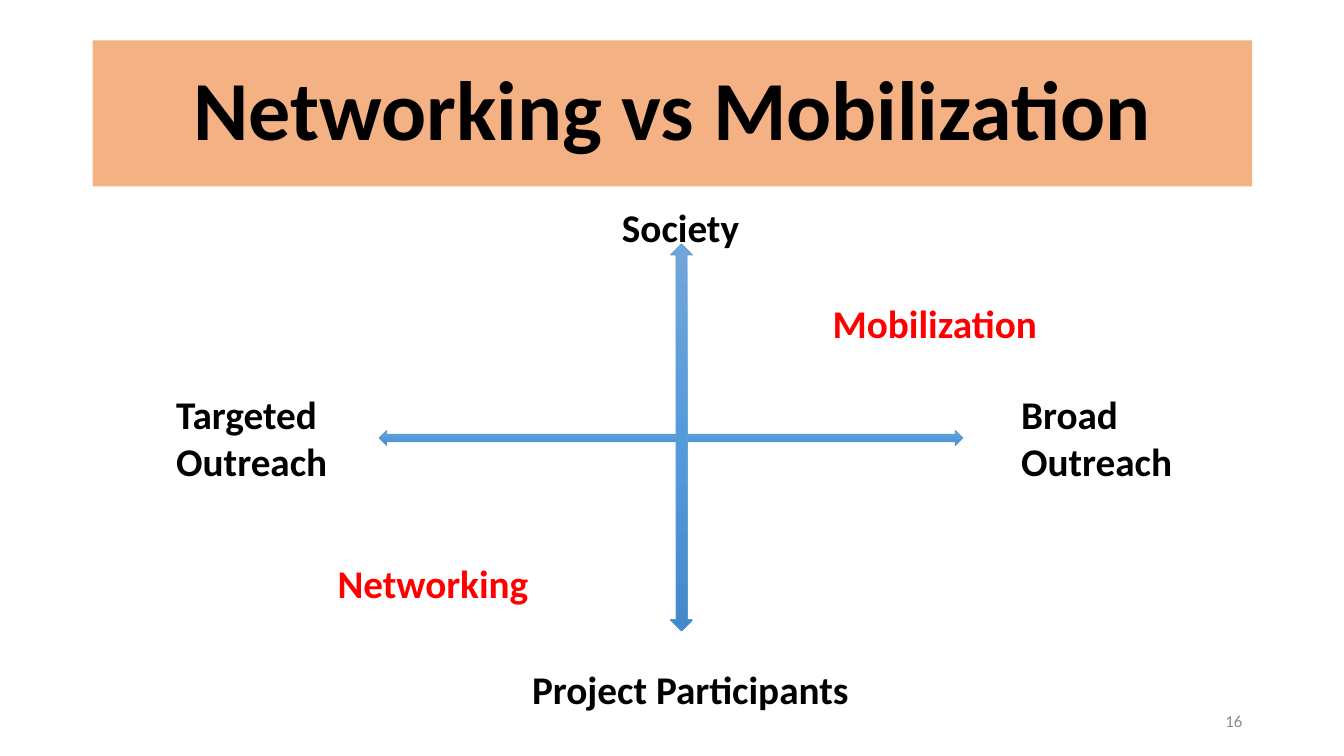
from copy import deepcopy

from pptx import Presentation
from pptx.dml.color import RGBColor
from pptx.enum.shapes import MSO_SHAPE as Shape
from pptx.enum.text import MSO_ANCHOR as Anchor, PP_ALIGN as Align
from pptx.oxml.ns import qn
from pptx.util import Emu, Pt

PX = 9144
COLORS = {
    "banner": "F4B183",
    "ink": "000000",
    "accent": "FF0000",
    "number": "8C8C8C",
    "outline": "5B9BD5",
}
AXIS_GRADIENT = ["71A6DB", "559BDB", "448ACA"]


class SlideBuilder:
    font_name = "Calibri"

    def __init__(self, presentation):
        self.slide = presentation.slides.add_slide(presentation.slide_layouts[6])

    def box(self, bounds):
        return [Emu(length * PX) for length in bounds]

    def color(self, name):
        return RGBColor.from_string(COLORS[name])

    def set_text(self, shape, text, size, color="ink", bold=True,
                 align=Align.LEFT, anchor=Anchor.TOP, wrap=True):
        frame = shape.text_frame
        frame.word_wrap = wrap
        frame.vertical_anchor = anchor
        paragraph = frame.paragraphs[0]
        paragraph.text = text
        paragraph.alignment = align
        font = paragraph.font
        font.name, font.size, font.bold = self.font_name, Pt(size), bold
        font.color.rgb = self.color(color)
        return paragraph

    def shape(self, kind, bounds):
        shape = self.slide.shapes.add_shape(kind, *self.box(bounds))
        shape.shadow.inherit = False
        return shape

    def banner(self, text, bounds):
        banner = self.shape(Shape.RECTANGLE, bounds)
        banner.fill.solid()
        banner.fill.fore_color.rgb = self.color("banner")
        banner.line.fill.background()
        title = self.set_text(banner, text, 60, align=Align.CENTER, anchor=Anchor.MIDDLE)
        title.line_spacing = 0.9

    def axis(self, kind, bounds):
        axis = self.shape(kind, bounds)
        axis.line.color.rgb = self.color("outline")
        axis.line.width = Pt(0.5)
        axis.fill.gradient()
        axis.fill.gradient_angle = 270
        first_stop = axis.element.spPr.find(".//" + qn("a:gs"))
        first_stop.addnext(deepcopy(first_stop))
        for index, stop in enumerate(axis.fill.gradient_stops):
            stop.position = index / 2
            stop.color.rgb = RGBColor.from_string(AXIS_GRADIENT[index])

    def label(self, text, bounds, size=28, **style):
        label = self.slide.shapes.add_textbox(*self.box(bounds))
        self.set_text(label, text, size, **style)


def main():
    presentation = Presentation()
    presentation.slide_width = Emu(1333 * PX)
    presentation.slide_height = Emu(750 * PX)
    builder = SlideBuilder(presentation)

    builder.banner("Networking vs Mobilization", (92, 40, 1150, 145))
    builder.axis(Shape.LEFT_RIGHT_ARROW, (376, 427, 579, 15))
    builder.axis(Shape.UP_DOWN_ARROW, (665, 242, 22, 384))

    builder.label("Broad Outreach", (1003, 382, 183, 104))
    builder.label("Targeted Outreach", (165, 382, 187, 104))
    for text, bounds, color in [
        ("Society", (607, 197, 138, 57), "ink"),
        ("Project Participants", (518, 655, 338, 57), "ink"),
        ("Mobilization", (816, 292, 225, 57), "accent"),
        ("Networking", (325, 550, 212, 57), "accent"),
    ]:
        builder.label(text, bounds, color=color, wrap=False)
    builder.label("16", (942, 695, 300, 40), size=12, color="number", bold=False,
                  align=Align.RIGHT, anchor=Anchor.MIDDLE)

    presentation.save("out.pptx")


if __name__ == "__main__":
    main()
